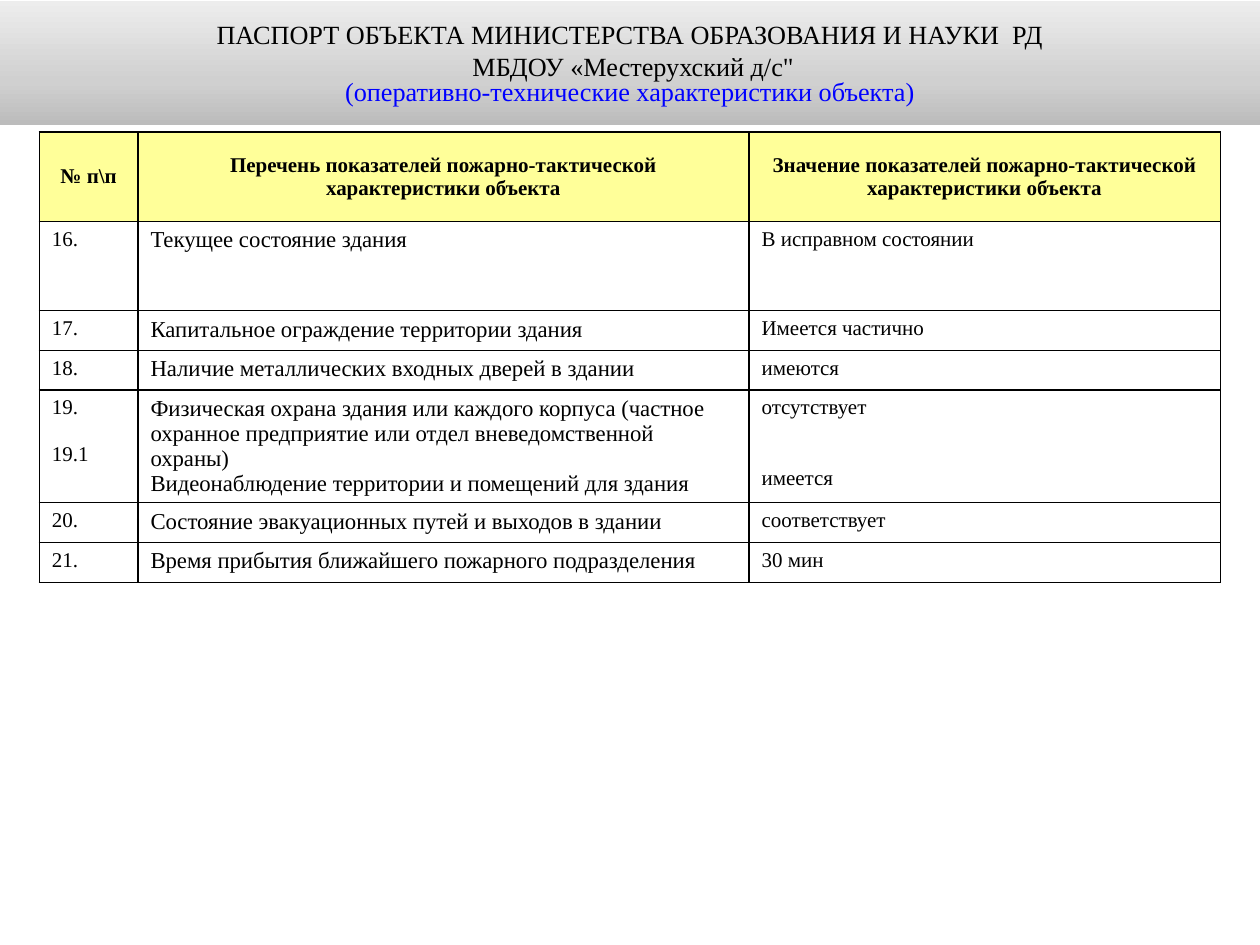
from copy import deepcopy

from lxml import etree
from pptx import Presentation
from pptx.dml.color import RGBColor
from pptx.enum import shapes, text
from pptx.oxml import ns
from pptx.util import Pt

COLORS = {
    "text": "000000",
    "subtitle": "0000FF",
    "header": "FFFF99",
    "cell": "FFFFFF",
    "border": "000000",
}
BAND_STOPS = [(0, "BCBCBC"), (0.35, "D0D0D0"), (1, "EDEDED")]
FONT = "Times New Roman"
LINE = 13.4

TITLE = ["ПАСПОРТ ОБЪЕКТА МИНИСТЕРСТВА ОБРАЗОВАНИЯ И НАУКИ  РД",
         " МБДОУ «Местерухский д/с\""]
SUBTITLE = "(оперативно-технические характеристики объекта)"
COL_WIDTHS = [56.3, 349.2, 269.3]
ROW_HEIGHTS = [51, 51, 22.7, 22.7, 64.3, 22.7, 23]
HEADER = ["№ п\\п",
          "Перечень показателей пожарно-тактической характеристики объекта",
          "Значение показателей пожарно-тактической характеристики объекта"]
ROWS = [
    (["16."], ["Текущее состояние здания"], ["В исправном состоянии"]),
    (["17."], ["Капитальное ограждение территории здания"], ["Имеется частично"]),
    (["18."], ["Наличие металлических входных дверей в здании"], ["имеются"]),
    (["19.", "19.1"],
     ["Физическая охрана здания или каждого корпуса (частное охранное "
      "предприятие или отдел вневедомственной охраны)",
      "Видеонаблюдение территории и помещений для здания"],
     ["отсутствует", "имеется"]),
    (["20."], ["Состояние эвакуационных путей и выходов в здании"], ["соответствует"]),
    (["21."], ["Время прибытия ближайшего пожарного подразделения"], ["30 мин"]),
]
COL_SIZES = [12, 13, 12]
COL_GAPS = [LINE, 0, 2 * LINE]


def rgb(name):
    return RGBColor.from_string(COLORS[name])


def add_run(p, words, size, color="text", bold=False):
    r = p.add_run()
    r.text = words
    r.font.name = FONT
    r.font.size = Pt(size)
    r.font.bold = bold
    r.font.color.rgb = rgb(color)


def add_title_band(s, x, y, w, h):
    sp = s.shapes.add_shape(shapes.MSO_SHAPE.RECTANGLE, Pt(x), Pt(y), Pt(w), Pt(h))
    sp.shadow.inherit = False
    sp.line.fill.background()
    sp.fill.gradient()
    sp.fill.gradient_angle = 90
    stops = sp._element.spPr.find(".//" + ns.qn("a:gsLst"))
    stops.append(deepcopy(stops[-1]))
    for stop, (position, color) in zip(sp.fill.gradient_stops, BAND_STOPS):
        stop.position = position
        stop.color.rgb = RGBColor.from_string(color)

    tf = sp.text_frame
    tf.word_wrap = True
    tf.vertical_anchor = text.MSO_ANCHOR.MIDDLE
    p = tf.paragraphs[0]
    p.alignment = text.PP_ALIGN.CENTER
    add_run(p, TITLE[0], 15)
    p.add_line_break()
    add_run(p, TITLE[1], 15)
    p = tf.add_paragraph()
    p.alignment = text.PP_ALIGN.CENTER
    p.line_spacing = 0.8
    add_run(p, SUBTITLE, 15, "subtitle")


def style_cell(cell, fill):
    tc_pr = cell._tc.get_or_add_tcPr()
    for side in ("a:lnL", "a:lnR", "a:lnT", "a:lnB"):
        ln = etree.SubElement(tc_pr, ns.qn(side), w=str(Pt(1)))
        solid = etree.SubElement(ln, ns.qn("a:solidFill"))
        etree.SubElement(solid, ns.qn("a:srgbClr"), val=COLORS["border"])
    cell.fill.solid()
    cell.fill.fore_color.rgb = rgb(fill)


def add_passport_table(s, x, y, w, h):
    table = s.shapes.add_table(len(ROW_HEIGHTS), len(COL_WIDTHS),
                               Pt(x), Pt(y), Pt(w), Pt(h)).table
    table.first_row = table.horz_banding = False
    for col, width in zip(table.columns, COL_WIDTHS):
        col.width = Pt(width)
    for row, height in zip(table.rows, ROW_HEIGHTS):
        row.height = Pt(height)

    for i, words in enumerate(HEADER):
        cell = table.cell(0, i)
        style_cell(cell, "header")
        cell.vertical_anchor = text.MSO_ANCHOR.MIDDLE
        p = cell.text_frame.paragraphs[0]
        p.alignment = text.PP_ALIGN.CENTER
        add_run(p, words, 12, bold=True)

    for j, row in enumerate(ROWS, 1):
        for i, lines in enumerate(row):
            cell = table.cell(j, i)
            style_cell(cell, "cell")
            tf = cell.text_frame
            for n, words in enumerate(lines):
                p = tf.add_paragraph() if n else tf.paragraphs[0]
                if n:
                    p.space_before = Pt(COL_GAPS[i])
                add_run(p, words, COL_SIZES[i])


def main():
    prs = Presentation()
    prs.slide_width, prs.slide_height = Pt(720), Pt(540)
    s = prs.slides.add_slide(prs.slide_layouts[6])
    add_passport_table(s, 22.5, 75.5, sum(COL_WIDTHS), sum(ROW_HEIGHTS))
    add_title_band(s, 0, 0.5, 720, 70.8)
    prs.save("out.pptx")


if __name__ == "__main__":
    main()
